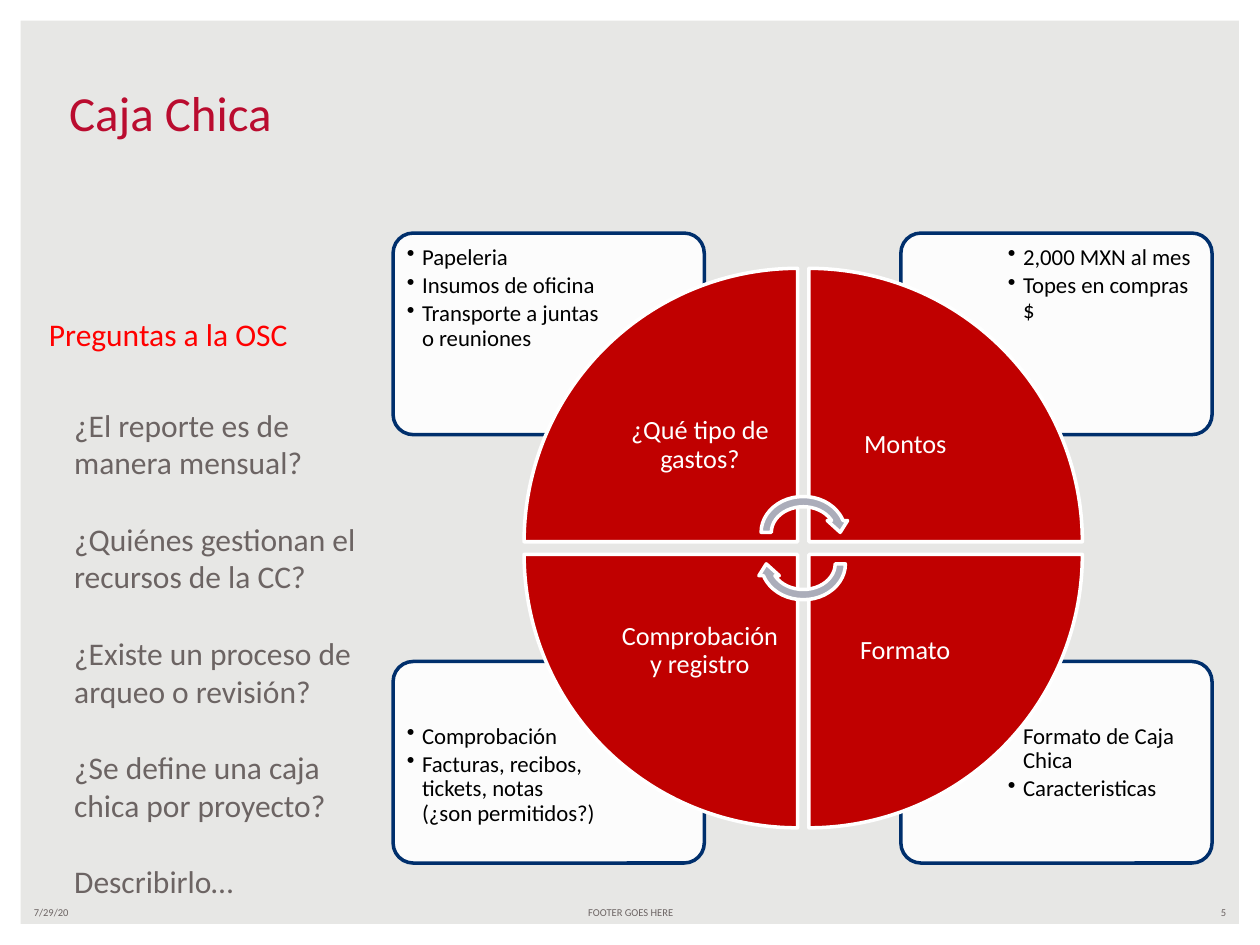
from lxml.etree import SubElement
from pptx import Presentation
from pptx.dml.color import RGBColor
from pptx.enum.shapes import MSO_SHAPE
from pptx.enum.text import MSO_ANCHOR, PP_ALIGN
from pptx.oxml.ns import qn
from pptx.util import Inches, Pt

GREY, RED, NAVY, WHITE = "6C6463", "C00000", "002F6C", "FFFFFF"


def add_shape(kind, x, y, w, h, fill, line=None, rotation=0):
    sp = s.shapes.add_shape(kind, Inches(x), Inches(y), Inches(w), Inches(h))
    sp.shadow.inherit = False
    sp.rotation = rotation
    sp.fill.solid()
    sp.fill.fore_color.rgb = RGBColor.from_string(fill)
    if line:
        sp.line.color.rgb = RGBColor.from_string(line)
        sp.line.width = Pt(2)
    else:
        sp.line.fill.background()
    return sp


def add_text(x, y, w, h, lines, size, color, anchor=MSO_ANCHOR.TOP,
             inset=None, wrap=True, bullet=False, **para_format):
    """Add one paragraph per line; para_format holds paragraph attributes."""
    tf = s.shapes.add_textbox(Inches(x), Inches(y), Inches(w), Inches(h)).text_frame
    tf.word_wrap = wrap
    tf.vertical_anchor = anchor
    if inset is not None:
        for side in ("left", "top", "right", "bottom"):
            setattr(tf, f"margin_{side}", Inches(inset))
    for i, line in enumerate(lines):
        p = tf.add_paragraph() if i else tf.paragraphs[0]
        for name, value in para_format.items():
            setattr(p, name, value)
        r = p.add_run()
        r.text = line
        r.font.name = "Calibri"
        r.font.size = Pt(size)
        r.font.color.rgb = RGBColor.from_string(color)
        if bullet:
            pPr = p._p.get_or_add_pPr()
            pPr.set("marL", str(Inches(0.12)))
            pPr.set("indent", str(Inches(-0.12)))
            SubElement(pPr, qn("a:buChar"), char="•")


prs = Presentation()
prs.slide_width, prs.slide_height = Inches(10), Inches(7.5)
s = prs.slides.add_slide(prs.slide_layouts[6])
s.background.fill.solid()
s.background.fill.fore_color.rgb = RGBColor.from_string("E7E7E5")

frame = add_shape(MSO_SHAPE.FRAME, 0, 0, 10, 7.5, WHITE)
frame.adjustments[0] = 0.022

# Footer and title
for x, w, text, align in [
    (0.17, 2.33, "7/29/20", PP_ALIGN.LEFT),
    (3.42, 3.17, "FOOTER GOES HERE", PP_ALIGN.CENTER),
    (7.5, 2.33, "5", PP_ALIGN.RIGHT),
]:
    add_text(x, 7.14, w, 0.2, [text], 6, GREY, MSO_ANCHOR.MIDDLE, alignment=align)
add_text(0.45, 0.6, 8.5, 0.57, ["Caja Chica"], 28, "BA0C2F", MSO_ANCHOR.BOTTOM)

# Cycle matrix: column, row, wedge rotation, wedge label, card bullets
quadrants = [
    (1, 1, 180, "Formato", ["Formato de Caja Chica", "Caracteristicas"]),
    (0, 1, 270, "Comprobación y registro",
     ["Comprobación", "Facturas, recibos, tickets, notas (¿son permitidos?)"]),
    (1, 0, 90, "Montos", ["2,000 MXN al mes", "Topes en compras $"]),
    (0, 0, 0, "¿Qué tipo de gastos?",
     ["Papeleria", "Insumos de oficina", "Transporte a juntas o reuniones"]),
]
for col, row, _, _, bullets in quadrants:
    card = add_shape(MSO_SHAPE.ROUNDED_RECTANGLE, 3.12 + 4.03 * col, 1.85 + 3.4 * row,
                     2.47, 1.6, WHITE, NAVY)
    card.adjustments[0] = 0.1
    color = card.fill._xPr.find(qn("a:solidFill"))[0]
    SubElement(color, qn("a:alpha"), val="90000")
    add_text(3.16 + 4.77 * col, 1.88 + 3.8 * row, 1.66, 1.13, bullets, 13, "000000",
             inset=0.07, bullet=True, line_spacing=0.9, space_after=Pt(2))

for col, row, rotation, label, _ in quadrants:
    add_shape(MSO_SHAPE.PIE_WEDGE, 4.16 + 2.26 * col, 2.13 + 2.27 * row,
              2.17, 2.17, RED, WHITE, rotation)
    add_text(4.79 + 1.63 * col, 2.77 + 1.63 * row, 1.53, 1.53, [label], 15, WHITE,
             MSO_ANCHOR.MIDDLE, inset=0.12, alignment=PP_ALIGN.CENTER, line_spacing=0.9)

for y, rotation in [(3.9, 0), (4.15, 180)]:
    add_shape(MSO_SHAPE.CIRCULAR_ARROW, 6, y, 0.75, 0.65, "ABADBA", WHITE, rotation)

# Questions
questions = [
    "¿El reporte es de manera mensual?",
    "¿Quiénes gestionan el recursos de la CC?",
    "¿Existe un proceso de arqueo o revisión?",
    "¿Se define una caja chica por proyecto?",
    "Describirlo…",
]
add_text(0.49, 3.17, 2.69, 4.64, questions, 18, GREY, space_after=Pt(22))
add_text(0.29, 2.45, 2.18, 0.4, ["Preguntas a la OSC"], 18, "FF0000", wrap=False)

prs.save("out.pptx")
